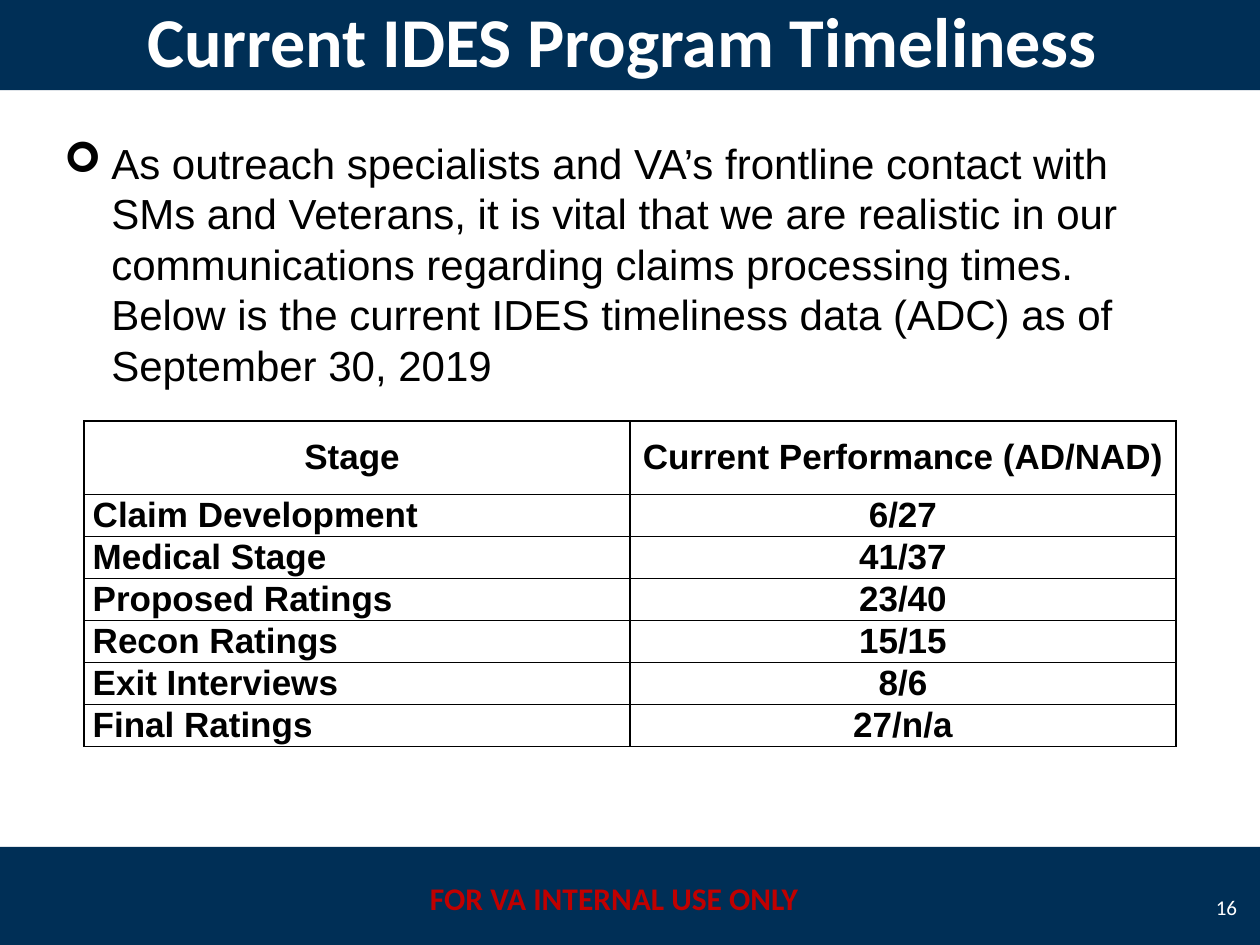
from lxml.etree import SubElement
from pptx import Presentation
from pptx.dml.color import RGBColor
from pptx.enum.shapes import MSO_SHAPE
from pptx.enum.text import MSO_ANCHOR, PP_ALIGN
from pptx.oxml.ns import qn
from pptx.util import Pt

COLORS = {"navy": "002F56", "red": "C00000", "white": "FFFFFF", "black": "000000"}

FORMATS = {
    "title": {"name": "Calibri", "size": Pt(40), "bold": True, "color": "white"},
    "notice": {"name": "Calibri", "size": Pt(18), "bold": True, "color": "red"},
    "number": {"name": "Calibri", "size": Pt(12), "bold": False, "color": "white"},
    "body": {"name": "Arial", "size": Pt(24), "bold": False, "color": "black"},
    "table": {"name": "Arial", "size": Pt(20), "bold": True, "color": "black"},
}

MESSAGE = (
    "As outreach specialists and VA’s frontline contact with SMs and Veterans, "
    "it is vital that we are realistic in our communications regarding claims "
    "processing times.  Below is the current IDES timeliness data (ADC) as of "
    "September 30, 2019"
)

STAGES = [
    ("Stage ", "Current Performance (AD/NAD)"),
    ("Claim Development", "6/27"),
    ("Medical Stage", "41/37"),
    ("Proposed Ratings", "23/40"),
    ("Recon Ratings", "15/15"),
    ("Exit Interviews", "8/6"),
    ("Final Ratings", "27/n/a"),
]


def rgb(color):
    return RGBColor.from_string(COLORS[color])


def write(paragraph, text, style, alignment):
    paragraph.alignment = alignment
    run = paragraph.add_run()
    run.text = text
    for attribute, value in FORMATS[style].items():
        if attribute == "color":
            run.font.color.rgb = rgb(value)
        else:
            setattr(run.font, attribute, value)


def add_text(slide, box, text, style, alignment, anchor=MSO_ANCHOR.TOP):
    frame = slide.shapes.add_textbox(*map(Pt, box)).text_frame
    frame.word_wrap = True
    frame.vertical_anchor = anchor
    paragraph = frame.paragraphs[0]
    write(paragraph, text, style, alignment)
    return paragraph


def add_band(slide, box):
    band = slide.shapes.add_shape(MSO_SHAPE.RECTANGLE, *map(Pt, box))
    band.shadow.inherit = False
    band.fill.solid()
    band.fill.fore_color.rgb = rgb("navy")
    band.line.fill.background()


def add_header(slide, box):
    add_band(slide, box)
    add_text(slide, box, "Current IDES Program Timeliness ", "title",
             PP_ALIGN.CENTER, MSO_ANCHOR.MIDDLE)


def add_footer(slide, box):
    left, top, width, height = box
    add_band(slide, box)
    add_text(slide, (left + 234, top + 15, 234, 29), "FOR VA INTERNAL USE ONLY",
             "notice", PP_ALIGN.CENTER)
    add_text(slide, (left + width - 36, top + 20, 30, 29), "16",
             "number", PP_ALIGN.RIGHT, MSO_ANCHOR.MIDDLE)


def add_message(slide, box):
    paragraph = add_text(slide, box, MESSAGE, "body", PP_ALIGN.LEFT)
    properties = paragraph._p.get_or_add_pPr()
    properties.set("marL", str(Pt(27)))
    properties.set("indent", str(-Pt(27)))
    SubElement(properties, qn("a:buFont"), typeface="Wingdings")
    SubElement(properties, qn("a:buChar"), char="➢")


def add_borders(cell):
    properties = cell._tc.get_or_add_tcPr()
    for position, side in enumerate(("lnL", "lnR", "lnT", "lnB")):
        line = properties.makeelement(qn(f"a:{side}"), {"w": str(Pt(1))})
        fill = SubElement(line, qn("a:solidFill"))
        SubElement(fill, qn("a:srgbClr"), val=COLORS["black"])
        properties.insert(position, line)


def add_stage_table(slide, box):
    left, top, width, height = box
    header_height = 42
    row_height = (height - header_height) / (len(STAGES) - 1)
    table = slide.shapes.add_table(len(STAGES), 2, *map(Pt, box)).table
    cell_format = {
        "margin_left": Pt(5), "margin_right": Pt(5),
        "margin_top": 0, "margin_bottom": 0,
        "vertical_anchor": MSO_ANCHOR.MIDDLE,
    }
    for column in table.columns:
        column.width = Pt(width / 2)
    for row_index, values in enumerate(STAGES):
        table.rows[row_index].height = Pt(row_height if row_index else header_height)
        for column_index, text in enumerate(values):
            cell = table.cell(row_index, column_index)
            for attribute, value in cell_format.items():
                setattr(cell, attribute, value)
            cell.fill.background()
            add_borders(cell)
            is_stage_name = row_index > 0 and column_index == 0
            write(cell.text_frame.paragraphs[0], text, "table",
                  PP_ALIGN.LEFT if is_stage_name else PP_ALIGN.CENTER)


def main():
    presentation = Presentation()
    presentation.slide_width, presentation.slide_height = Pt(720), Pt(540)
    slide = presentation.slides.add_slide(presentation.slide_layouts[6])
    add_footer(slide, (0, 484, 720, 57.6))
    add_header(slide, (0, -6, 720, 57.6))
    add_message(slide, (29.5, 75, 660, 152.5))
    add_stage_table(slide, (48, 240.5, 624, 186))
    presentation.save("out.pptx")


if __name__ == "__main__":
    main()
